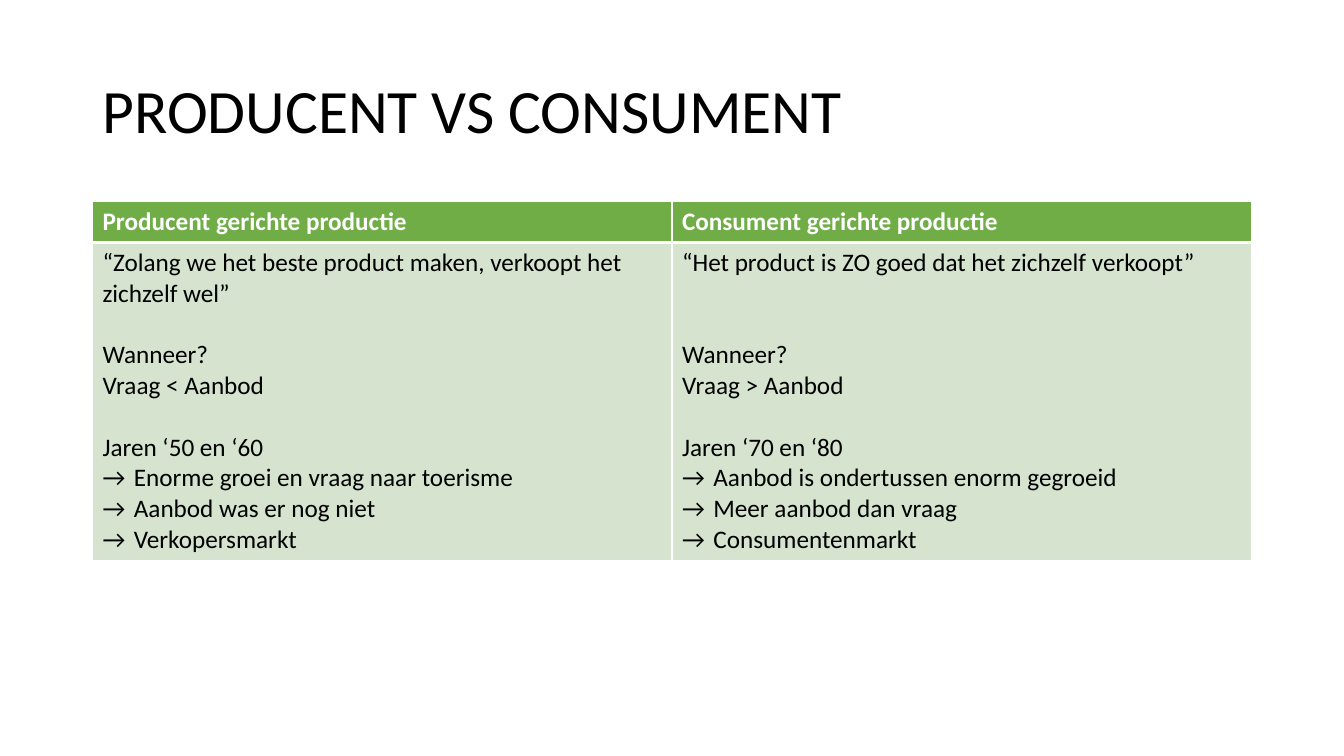
"""Build a slide comparing producer-oriented and consumer-oriented production."""
from lxml.etree import SubElement
from pptx import Presentation
from pptx.dml.color import RGBColor as Rgb
from pptx.enum.text import MSO_ANCHOR as Anchor, PP_ALIGN as Align
from pptx.oxml.ns import qn
from pptx.util import Cm, Pt

COLORS = {"white": "FFFFFF", "black": "000000", "green": "70AD47", "pale": "D5E3CF"}
FONT = "Calibri"
LINE = 22
LEFT, WIDTH = Cm(2.33), Cm(29.21)

COLUMNS = [
    ("Producent gerichte productie", [
        ("“Zolang we het beste product maken, verkoopt het zichzelf wel”", 0),
        ("Wanneer?", 1),
        ("Vraag < Aanbod", 0),
        ("Jaren ‘50 en ‘60", 1),
    ], ["Enorme groei en vraag naar toerisme", "Aanbod was er nog niet", "Verkopersmarkt"]),
    ("Consument gerichte productie", [
        ("“Het product is ZO goed dat het zichzelf verkoopt”", 0),
        ("Wanneer?", 2),
        ("Vraag > Aanbod", 0),
        ("Jaren ‘70 en ‘80", 1),
    ], ["Aanbod is ondertussen enorm gegroeid", "Meer aanbod dan vraag", "Consumentenmarkt"]),
]


def set_font(para, size, color, bold=False):
    """Set the font of a whole paragraph."""
    para.font.name = FONT
    para.font.size = Pt(size)
    para.font.bold = bold
    para.font.color.rgb = Rgb.from_string(COLORS[color])


def paint_cell(cell, color, bottom):
    """Give a cell white borders and a solid fill."""
    props = cell._tc.get_or_add_tcPr()
    for side, points in (("L", 1), ("R", 1), ("T", 1), ("B", bottom)):
        border = SubElement(props, qn(f"a:ln{side}"), w=str(Pt(points)))
        fill = SubElement(border, qn("a:solidFill"))
        SubElement(fill, qn("a:srgbClr"), val=COLORS["white"])
    cell.fill.solid()
    cell.fill.fore_color.rgb = Rgb.from_string(COLORS[color])


deck = Presentation()
deck.slide_width, deck.slide_height = Cm(33.87), Cm(19.05)
page = deck.slides.add_slide(deck.slide_layouts[5])

title = page.shapes.title
title.left, title.top, title.width, title.height = LEFT, Cm(1.02), WIDTH, Cm(3.68)
title.text_frame.text = "PRODUCENT VS CONSUMENT"
title.text_frame.vertical_anchor = Anchor.MIDDLE
heading = title.text_frame.paragraphs[0]
heading.alignment = Align.LEFT
heading.line_spacing = 0.9
set_font(heading, 44, "black")

table = page.shapes.add_table(2, 2, LEFT, Cm(5.08), WIDTH, Cm(8.92)).table
table.rows[0].height, table.rows[1].height = Cm(1.03), Cm(7.89)

for index, (header, statements, bullets) in enumerate(COLUMNS):
    head, body = table.cell(0, index), table.cell(1, index)
    paint_cell(head, "green", 3)
    paint_cell(body, "pale", 1)
    head.text = header
    set_font(head.text_frame.paragraphs[0], 18, "white", True)

    body.text = "\n".join([text for text, gap in statements] + bullets)
    paras = body.text_frame.paragraphs
    for para in paras:
        set_font(para, 18, "black")
    for para, (text, gap) in zip(paras, statements):
        para.space_before = Pt(gap * LINE)
    for para in paras[len(statements):]:
        props = para._p.get_or_add_pPr()
        props.set("marL", str(Cm(0.79)))
        props.set("indent", str(-Cm(0.79)))
        SubElement(props, qn("a:buFont"), typeface=FONT)
        SubElement(props, qn("a:buChar"), char="→")
        props.append(props.find(qn("a:defRPr")))

deck.save("out.pptx")
